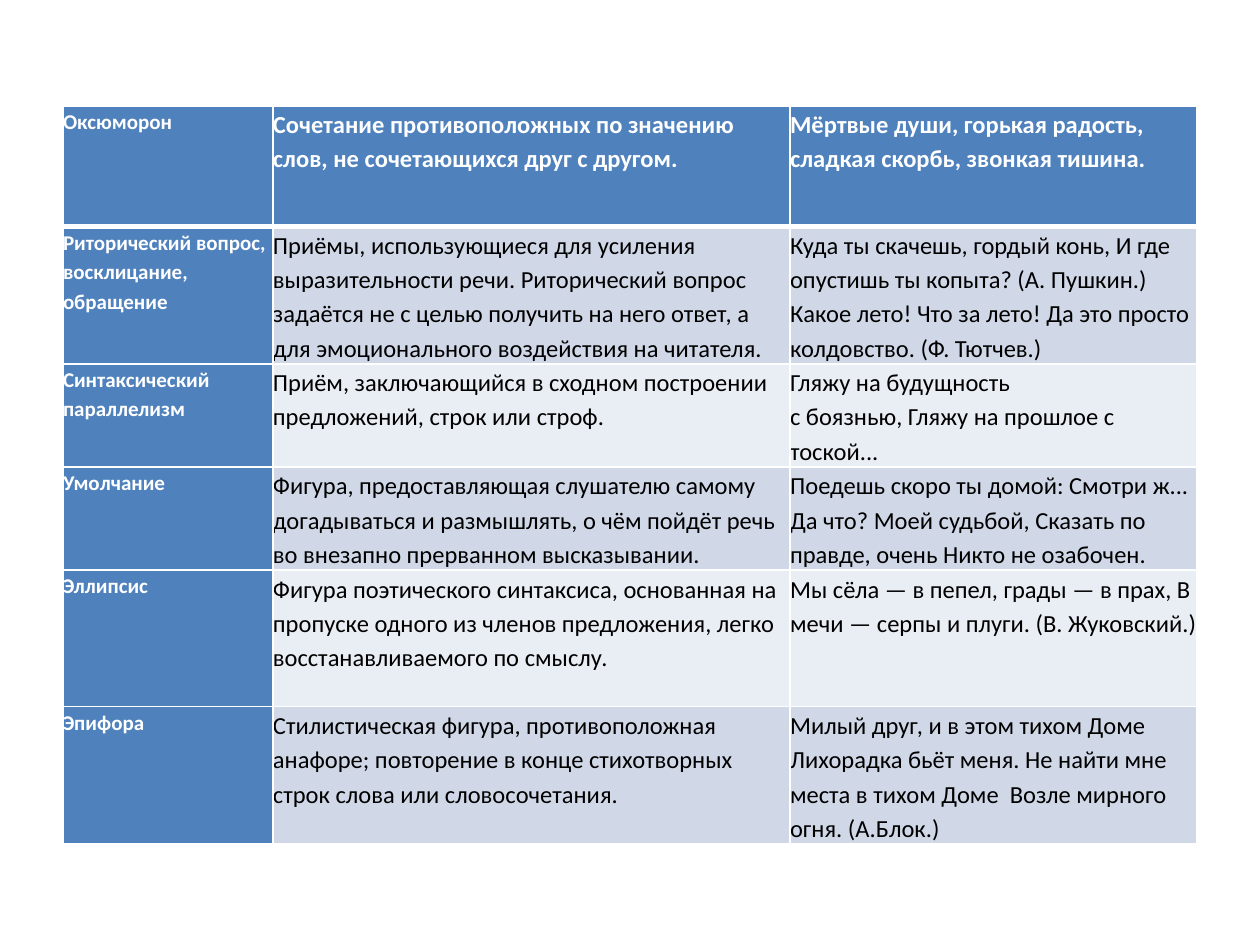
from dataclasses import dataclass

from lxml import etree
from pptx import Presentation
from pptx.dml.color import RGBColor
from pptx.oxml.ns import qn
from pptx.util import Pt


@dataclass(frozen=True)
class Theme:
    font: str = "Calibri"
    accent: str = "4F81BD"
    bands: tuple = ("E9EDF4", "D0D8E8")
    white: str = "FFFFFF"
    black: str = "000000"
    term_size: int = 12
    body_size: int = 14
    line_spacing: float = 1.15


theme = Theme()


def add_border(cell, side, width):
    """Draw one white cell border; call before setting the fill."""
    ln = etree.SubElement(cell._tc.get_or_add_tcPr(), qn(f"a:{side}"), w=str(Pt(width)))
    fill = etree.SubElement(ln, qn("a:solidFill"))
    etree.SubElement(fill, qn("a:srgbClr"), val=theme.white)


# Term, definition, example
rows = [
    ("Оксюморон",
     "Сочетание противоположных по значению слов, не сочетающихся друг с другом.",
     "Мёртвые души, горькая радость, сладкая скорбь, звонкая тишина."),
    ("Риторический вопрос, восклицание, обращение",
     "Приёмы, использующиеся для усиления выразительности речи. Риторический вопрос "
     "задаётся не с целью получить на него ответ, а для эмоционального воздействия на читателя.",
     "Куда ты скачешь, гордый конь, И где опустишь ты копыта? (А. Пушкин.) "
     "Какое лето! Что за лето! Да это просто колдовство. (Ф. Тютчев.)"),
    ("Синтаксический\nпараллелизм",
     "Приём, заключающийся в сходном построении предложений, строк или строф.",
     "Гляжу на будущность\nс боязнью, Гляжу на прошлое с тоской..."),
    ("Умолчание",
     "Фигура, предоставляющая слушателю самому догадываться и размышлять, "
     "о чём пойдёт речь во внезапно прерванном высказывании.",
     "Поедешь скоро ты домой: Смотри ж... Да что? Моей судьбой, "
     "Сказать по правде, очень Никто не озабочен."),
    ("Эллипсис",
     "Фигура поэтического синтаксиса, основанная на пропуске одного из членов "
     "предложения, легко восстанавливаемого по смыслу.",
     "Мы сёла — в пепел, грады — в прах, В мечи — серпы и плуги. (В. Жуковский.)"),
    ("Эпифора",
     "Стилистическая фигура, противоположная анафоре; повторение в конце "
     "стихотворных строк слова или словосочетания.",
     "Милый друг, и в этом тихом Доме Лихорадка бьёт меня. Не найти мне места "
     "в тихом Доме  Возле мирного огня. (А.Блок.)"),
]
col_widths = [120, 295.5, 232.5]
row_heights = [69, 78, 59, 59, 78, 78]

prs = Presentation()
prs.slide_width, prs.slide_height = Pt(720), Pt(540)
s = prs.slides.add_slide(prs.slide_layouts[6])

# Table grid
table = s.shapes.add_table(len(rows), len(col_widths), Pt(36), Pt(60.5),
                           Pt(sum(col_widths)), Pt(sum(row_heights))).table
for column, width in zip(table.columns, col_widths):
    column.width = Pt(width)
for row, height in zip(table.rows, row_heights):
    row.height = Pt(height)

# Cells: accent header row and term column, banded body
for i, texts in enumerate(rows):
    for j, text in enumerate(texts):
        cell = table.cell(i, j)
        accented = i == 0 or j == 0
        cell.margin_left = cell.margin_right = cell.margin_top = cell.margin_bottom = 0
        for side in ("lnL", "lnR", "lnT", "lnB"):
            header_rule = (i, side) in ((0, "lnB"), (1, "lnT"))
            add_border(cell, side, 3 if header_rule else 1)
        cell.fill.solid()
        cell.fill.fore_color.rgb = RGBColor.from_string(
            theme.accent if accented else theme.bands[i % 2])

        cell.text_frame.text = text
        for p in cell.text_frame.paragraphs:
            p.line_spacing = theme.line_spacing
            for r in p.runs:
                r.font.name = theme.font
                r.font.size = Pt(theme.term_size if j == 0 else theme.body_size)
                r.font.bold = accented
                r.font.color.rgb = RGBColor.from_string(
                    theme.white if accented else theme.black)

prs.save("out.pptx")
